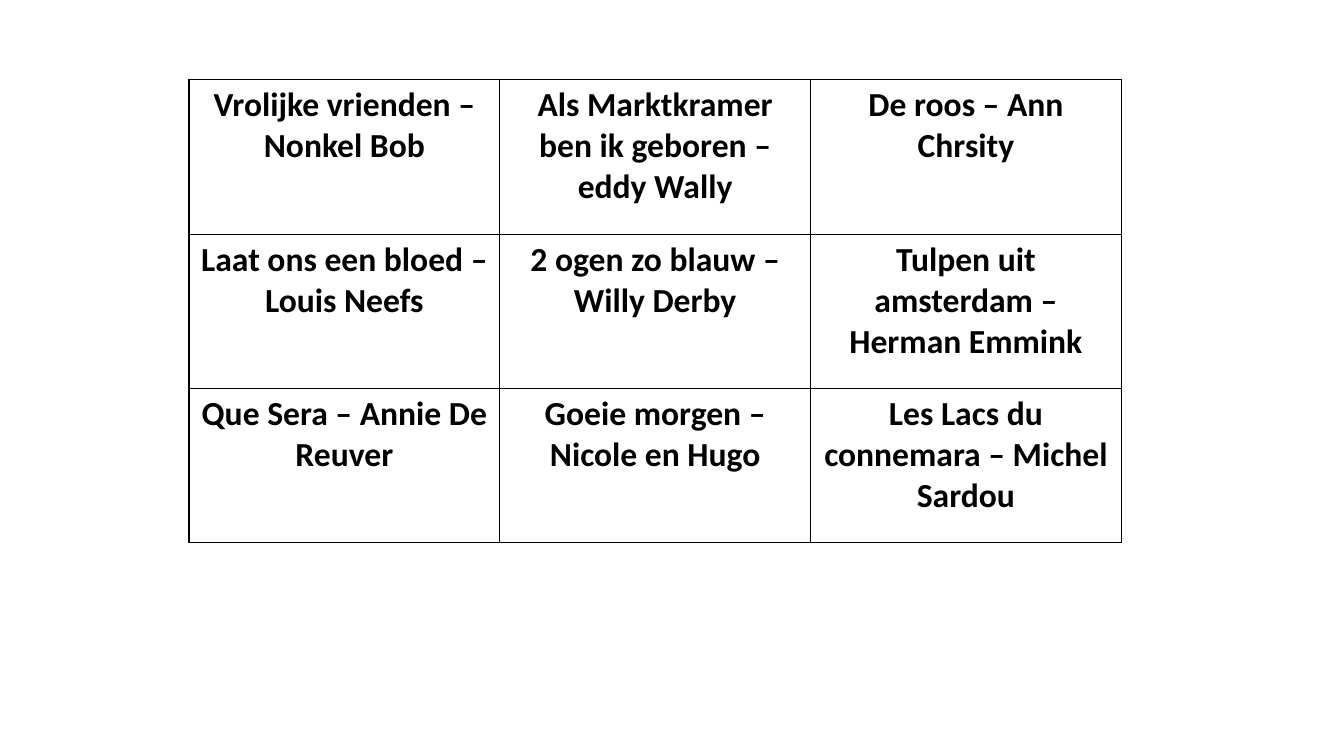
import dataclasses

import lxml.etree
import pptx
import pptx.dml.color
import pptx.enum.text
import pptx.oxml.ns
import pptx.table
import pptx.util

EMU_PER_PX = 9525
PAGE_WIDTH, PAGE_HEIGHT = 1280, 720
COLORS = {"text": "000000", "border": "000000", "cell": "FFFFFF"}
FONT = "Calibri"


@dataclasses.dataclass(frozen=True)
class Grid:
    left: int
    top: int
    column_width: int
    row_height: int


SONG_GRID = Grid(left=180, top=76, column_width=296, row_height=147)
SONGS = [
    [
        "Vrolijke vrienden – Nonkel Bob",
        "Als Marktkramer ben ik geboren – eddy Wally",
        "De roos – Ann Chrsity",
    ],
    [
        "Laat ons een bloed – Louis Neefs",
        "2 ogen zo blauw – Willy Derby",
        "Tulpen uit amsterdam – Herman Emmink",
    ],
    [
        "Que Sera – Annie De Reuver",
        "Goeie morgen – Nicole en Hugo",
        "Les Lacs du connemara – Michel Sardou",
    ],
]


def px(length: int) -> pptx.util.Emu:
    return pptx.util.Emu(length * EMU_PER_PX)


def rgb(name: str) -> pptx.dml.color.RGBColor:
    return pptx.dml.color.RGBColor.from_string(COLORS[name])


def write_text(
    cell: pptx.table._Cell, text: str, *, size: int, bold: bool, color: str
) -> None:
    para = cell.text_frame.paragraphs[0]
    para.alignment = pptx.enum.text.PP_ALIGN.CENTER
    span = para.add_run()
    span.text = text
    span.font.name = FONT
    span.font.size = pptx.util.Pt(size)
    span.font.bold = bold
    span.font.color.rgb = rgb(color)


def add_borders(cell: pptx.table._Cell, color: str, width: int) -> None:
    """Put a solid line on all four sides; the schema wants it before the fill."""
    qn = pptx.oxml.ns.qn
    properties = cell._tc.get_or_add_tcPr()
    for position, side in enumerate(("lnL", "lnR", "lnT", "lnB")):
        line = lxml.etree.Element(qn(f"a:{side}"), w=str(pptx.util.Pt(width)))
        fill = lxml.etree.SubElement(line, qn("a:solidFill"))
        lxml.etree.SubElement(fill, qn("a:srgbClr"), val=COLORS[color])
        properties.insert(position, line)


def add_song_table(page: pptx.slide.Slide, grid: Grid, songs: list[list[str]]) -> None:
    row_count, column_count = len(songs), len(songs[0])
    table = page.shapes.add_table(
        row_count,
        column_count,
        px(grid.left),
        px(grid.top),
        px(grid.column_width * column_count),
        px(grid.row_height * row_count),
    ).table
    table.first_row = False
    table.horz_banding = False
    for row, titles in enumerate(songs):
        for column, title in enumerate(titles):
            cell = table.cell(row, column)
            cell.fill.solid()
            cell.fill.fore_color.rgb = rgb("cell")
            add_borders(cell, "border", 1)
            write_text(cell, title, size=24, bold=True, color="text")


def main() -> None:
    deck = pptx.Presentation()
    deck.slide_width, deck.slide_height = px(PAGE_WIDTH), px(PAGE_HEIGHT)
    page = deck.slides.add_slide(deck.slide_layouts[6])
    add_song_table(page, SONG_GRID, SONGS)
    deck.save("out.pptx")


if __name__ == "__main__":
    main()
